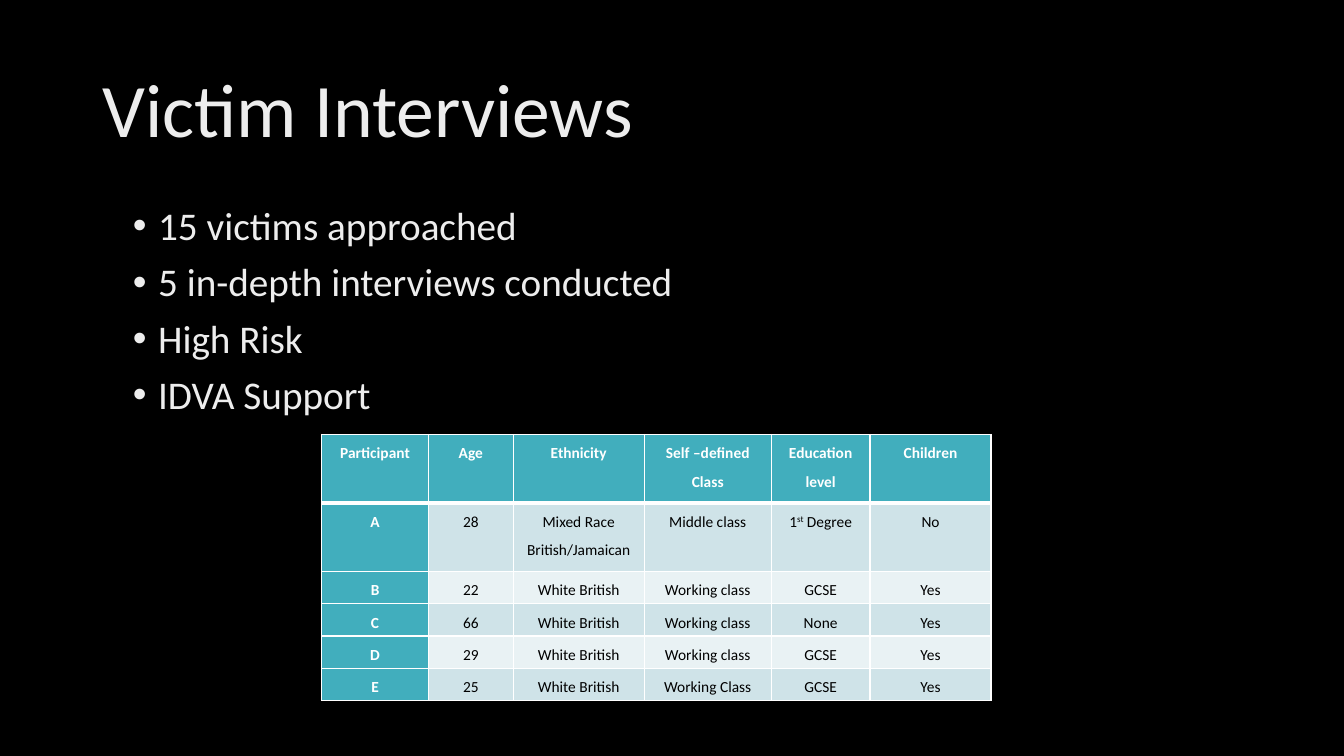
from dataclasses import dataclass

from lxml.etree import SubElement
from pptx import Presentation
from pptx.dml.color import RGBColor
from pptx.enum.text import MSO_ANCHOR as Anchor, PP_ALIGN as Align
from pptx.oxml import parse_xml
from pptx.oxml.ns import nsdecls, qn
from pptx.slide import Slide
from pptx.table import _Cell as Cell
from pptx.text.text import Font, TextFrame, _Paragraph as Paragraph
from pptx.util import Inches, Pt


@dataclass(frozen=True)
class Theme:
    font: str = "Calibri"
    background: str = "000000"
    sheen: tuple[str, ...] = ("BFBFBF", "EDEDED", "FFFFFF")
    accent: str = "41AEBD"
    bands: tuple[str, ...] = ("CFE3E8", "E9F2F4")
    light: str = "FFFFFF"
    dark: str = "000000"
    title_size: int = 54
    bullet_size: int = 28
    table_size: int = 11
    thin_rule: int = 1
    header_rule: int = 3


@dataclass(frozen=True)
class Box:
    left: float
    top: float
    width: float
    height: float

    def inches(self) -> list[int]:
        return [Inches(n) for n in (self.left, self.top, self.width, self.height)]


@dataclass(frozen=True)
class Participant:
    label: str
    age: str
    ethnicity: str
    social_class: str
    education: str
    children: str

    def values(self) -> list[str]:
        return [self.label, self.age, self.ethnicity,
                self.social_class, self.education, self.children]


THEME = Theme()
TITLE_BOX = Box(0.92, 0.4, 11.5, 1.45)
FINDINGS_BOX = Box(1.22, 2, 11.19, 4.76)
TABLE_BOX = Box(3.19, 4.31, 6.64, 2.64)
FINDINGS = ["15 victims approached", "5 in-depth interviews conducted",
            "High Risk", "IDVA Support"]
HEADINGS = Participant("Participant", "Age", "Ethnicity", "Self –defined Class",
                       "Education level", "Children")
ORDINAL = "st"
PARTICIPANTS = [
    Participant("A", "28", "Mixed Race British/Jamaican", "Middle class",
                "1st Degree", "No"),
    Participant("B", "22", "White British", "Working class", "GCSE", "Yes"),
    Participant("C", "66", "White British", "Working class", "None", "Yes"),
    Participant("D", "29", "White British", "Working class", "GCSE", "Yes"),
    Participant("E", "25", "White British", "Working Class", "GCSE", "Yes"),
]
COLUMN_WIDTHS = [1.06, 0.84, 1.3, 1.26, 0.98, 1.2]
TALL_ROW, SHORT_ROW = 0.68, 0.32


def style_font(font: Font, size: int) -> None:
    font.name = THEME.font
    font.size = Pt(size)


def apply_sheen(paragraph: Paragraph, middle: int) -> None:
    """Fill the runs with the grey gradient, its middle stop at a percentage."""
    stops = "".join(
        f'<a:gs pos="{percent * 1000}"><a:srgbClr val="{color}"/></a:gs>'
        for percent, color in zip((0, middle, 100), THEME.sheen))
    for run in paragraph.runs:
        run.font._element.insert(0, parse_xml(
            f'<a:gradFill {nsdecls("a")}><a:gsLst>{stops}</a:gsLst>'
            '<a:lin ang="4800000" scaled="0"/></a:gradFill>'))


def add_text_frame(slide: Slide, box: Box, anchor: Anchor) -> TextFrame:
    frame = slide.shapes.add_textbox(*box.inches()).text_frame
    frame.word_wrap = True
    frame.vertical_anchor = anchor
    return frame


def add_title(slide: Slide) -> None:
    frame = add_text_frame(slide, TITLE_BOX, Anchor.MIDDLE)
    frame.text = "Victim Interviews"
    title = frame.paragraphs[0]
    title.line_spacing = 0.9
    style_font(title.runs[0].font, THEME.title_size)
    apply_sheen(title, 28)


def add_findings(slide: Slide) -> None:
    frame = add_text_frame(slide, FINDINGS_BOX, Anchor.TOP)
    frame.text = "\n".join(FINDINGS)
    for index, finding in enumerate(frame.paragraphs):
        finding.line_spacing = 0.9
        finding.space_before = Pt(10 if index else 0)
        properties = finding._p.get_or_add_pPr()
        properties.set("marL", str(Inches(0.25)))
        properties.set("indent", str(-Inches(0.25)))
        SubElement(properties, qn("a:buFont"), typeface="Arial")
        SubElement(properties, qn("a:buChar"), char="•")
        style_font(finding.runs[0].font, THEME.bullet_size)
        apply_sheen(finding, 34)


def add_borders(cell: Cell, top: int, bottom: int) -> None:
    thin = THEME.thin_rule
    properties = cell._tc.get_or_add_tcPr()
    for side, points in zip("LRTB", (thin, thin, top, bottom)):
        rule = SubElement(properties, qn(f"a:ln{side}"), w=str(Pt(points)))
        fill = SubElement(rule, qn("a:solidFill"))
        SubElement(fill, qn("a:srgbClr"), val=THEME.light)


def write_cell(cell: Cell, value: str, fill: str, heading: bool) -> None:
    cell.margin_left = cell.margin_right = Inches(0.07)
    cell.margin_top = cell.margin_bottom = 0
    cell.fill.solid()
    cell.fill.fore_color.rgb = RGBColor.from_string(fill)
    paragraph = cell.text_frame.paragraphs[0]
    paragraph.alignment = Align.CENTER
    paragraph.line_spacing = 1.5
    number, suffix, rest = value.partition(ORDINAL)
    if number.isdigit() and suffix:
        for part in (number, suffix, rest):
            paragraph.add_run().text = part
        paragraph.runs[1].font._element.set("baseline", "30000")
    else:
        paragraph.text = value
    for run in paragraph.runs:
        style_font(run.font, THEME.table_size)
        run.font.bold = heading
        run.font.color.rgb = RGBColor.from_string(
            THEME.light if heading else THEME.dark)


def add_participants(slide: Slide) -> None:
    rows = [HEADINGS, *PARTICIPANTS]
    table = slide.shapes.add_table(
        len(rows), len(COLUMN_WIDTHS), *TABLE_BOX.inches()).table
    table.horz_banding = False
    for column, width in zip(table.columns, COLUMN_WIDTHS):
        column.width = Inches(width)
    for r, participant in enumerate(rows):
        table.rows[r].height = Inches(TALL_ROW if r < 2 else SHORT_ROW)
        for c, value in enumerate(participant.values()):
            cell = table.cell(r, c)
            heading = r == 0 or c == 0
            add_borders(cell,
                        top=THEME.header_rule if r == 1 else THEME.thin_rule,
                        bottom=THEME.header_rule if r == 0 else THEME.thin_rule)
            fill = THEME.accent if heading else THEME.bands[(r - 1) % 2]
            write_cell(cell, value, fill, heading)


def main() -> None:
    deck = Presentation()
    deck.slide_width, deck.slide_height = Inches(13.33), Inches(7.5)
    slide = deck.slides.add_slide(deck.slide_layouts[6])
    slide.background.fill.solid()
    slide.background.fill.fore_color.rgb = RGBColor.from_string(THEME.background)
    add_title(slide)
    add_findings(slide)
    add_participants(slide)
    deck.save("out.pptx")


if __name__ == "__main__":
    main()
